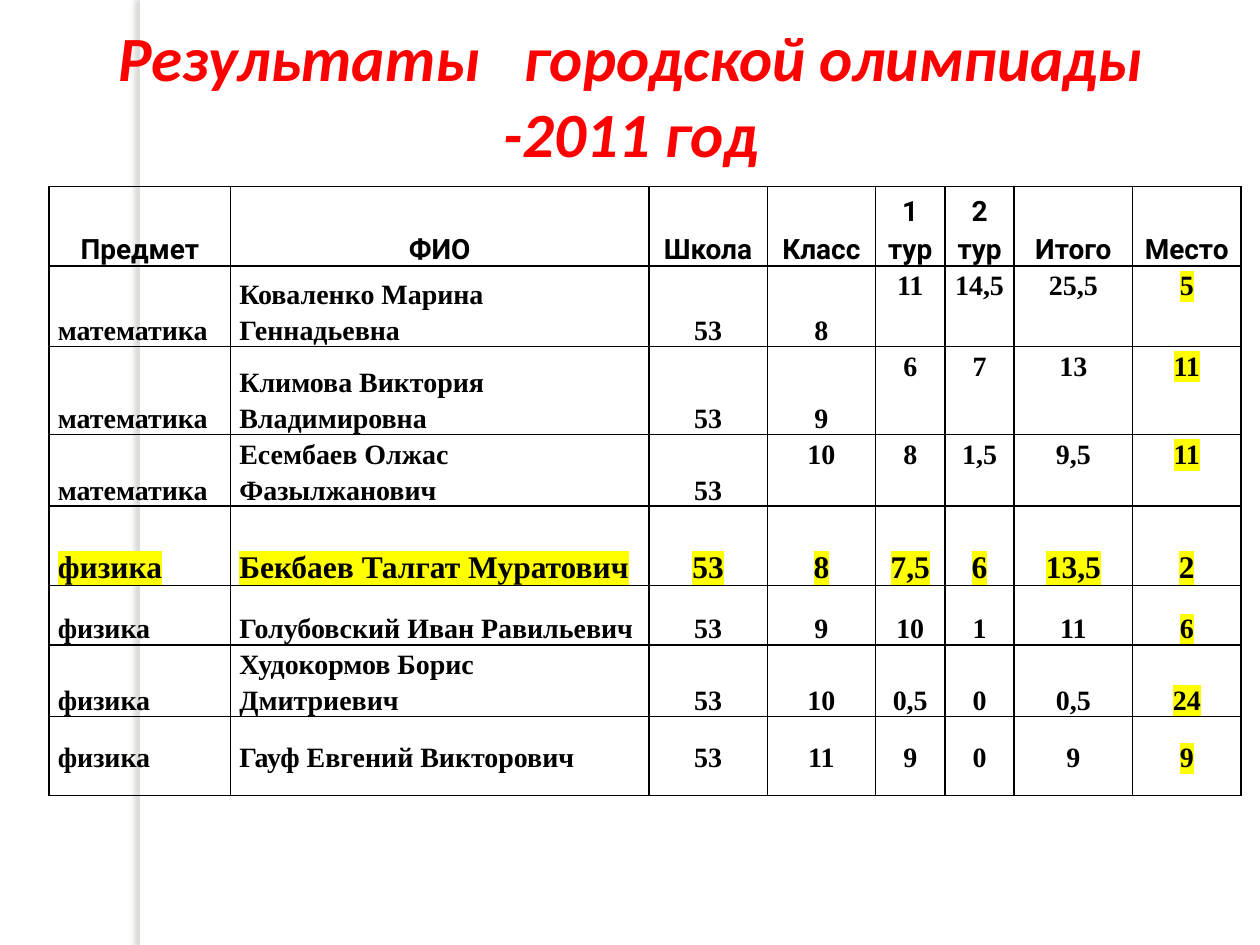
from dataclasses import dataclass

from lxml.etree import SubElement
from pptx import Presentation
from pptx.dml.color import RGBColor
from pptx.enum.shapes import MSO_SHAPE
from pptx.enum.text import MSO_ANCHOR, MSO_AUTO_SIZE, PP_ALIGN
from pptx.oxml import parse_xml
from pptx.oxml.ns import nsdecls, qn
from pptx.slide import Slide
from pptx.util import Inches, Pt

BLACK = RGBColor(0, 0, 0)
WHITE = RGBColor(255, 255, 255)
RED = RGBColor(255, 0, 0)
YELLOW = RGBColor(255, 255, 0)
SHADOW = RGBColor(0x73, 0x6F, 0x63)

TITLE = "Результаты   городской олимпиады -2011 год"
RESULTS = [
    ["Предмет", "ФИО", "Школа", "Класс", "1 тур", "2 тур", "Итого", "Место"],
    ["математика", "Коваленко Марина Геннадьевна", "53", "8", "11", "14,5", "25,5", "5"],
    ["математика", "Климова Виктория Владимировна", "53", "9", "6", "7", "13", "11"],
    ["математика", "Есембаев Олжас Фазылжанович", "53", "10", "8", "1,5", "9,5", "11"],
    ["физика", "Бекбаев Талгат Муратович", "53", "8", "7,5", "6", "13,5", "2"],
    ["физика", "Голубовский Иван Равильевич", "53", "9", "10", "1", "11", "6"],
    ["физика", "Худокормов Борис Дмитриевич", "53", "10", "0,5", "0", "0,5", "24"],
    ["физика", "Гауф Евгений Викторович", "53", "11", "9", "0", "9", "9"],
]
COLUMN_WIDTHS = [1.44, 3.32, 0.94, 0.86, 0.55, 0.55, 0.94, 0.86]
ROW_HEIGHTS = [0.63, 0.64, 0.7, 0.48, 0.63, 0.47, 0.47, 0.63]
FIRST_TOP_COLUMN = {1: 4, 2: 4, 3: 3}
WINNER_ROW = 4
LAST_ROW = len(RESULTS) - 1
PLACE_COLUMN = len(COLUMN_WIDTHS) - 1


@dataclass
class SlideBuilder:
    """Draws the elements of the results slide in one style."""

    slide: Slide
    title_font: str = "Calibri"
    header_font: str = "Roboto"
    body_font: str = "Times New Roman"

    def add_strip(self, left, top, width, height):
        strip = self.slide.shapes.add_shape(
            MSO_SHAPE.RECTANGLE, Inches(left), Inches(top), Inches(width), Inches(height))
        strip.fill.solid()
        strip.fill.fore_color.rgb = WHITE
        strip.line.fill.background()
        strip.element.spPr.append(parse_xml(
            f'<a:effectLst {nsdecls("a")}><a:outerShdw blurRad="{Pt(3)}" dist="{Pt(3)}" '
            f'dir="10800000"><a:srgbClr val="{SHADOW}"><a:alpha val="25000"/></a:srgbClr>'
            '</a:outerShdw></a:effectLst>'))

    def add_title(self, text, left, top, width, height):
        title = self.slide.shapes.title
        title.left, title.top = Inches(left), Inches(top)
        title.width, title.height = Inches(width), Inches(height)
        frame = title.text_frame
        frame.text = text
        frame.word_wrap = True
        frame.auto_size = MSO_AUTO_SIZE.NONE
        frame.vertical_anchor = MSO_ANCHOR.MIDDLE
        para = frame.paragraphs[0]
        para.alignment = PP_ALIGN.CENTER
        self.format_span(para.runs[0], self.title_font, 36, RED)
        para.runs[0].font.italic = True
        title.element.getparent().append(title.element)

    def add_table(self, rows, left, top):
        table = self.slide.shapes.add_table(
            len(rows), len(COLUMN_WIDTHS), Inches(left), Inches(top),
            Inches(sum(COLUMN_WIDTHS)), Inches(sum(ROW_HEIGHTS))).table
        table.first_row = table.horz_banding = False
        for column, width in zip(table.columns, COLUMN_WIDTHS):
            column.width = Inches(width)
        for row, height in zip(table.rows, ROW_HEIGHTS):
            row.height = Inches(height)
        for row_index, values in enumerate(rows):
            for column_index, value in enumerate(values):
                cell = table.cell(row_index, column_index)
                self.fill_cell(cell, value, row_index, column_index)

    def fill_cell(self, cell, value, row, column):
        cell.text_frame.text = value
        cell.margin_left = cell.margin_right = Inches(0.07)
        cell.margin_top = cell.margin_bottom = 0
        if row == LAST_ROW:
            cell.vertical_anchor = MSO_ANCHOR.MIDDLE
        elif column >= FIRST_TOP_COLUMN.get(row, len(COLUMN_WIDTHS)):
            cell.vertical_anchor = MSO_ANCHOR.TOP
        else:
            cell.vertical_anchor = MSO_ANCHOR.BOTTOM
        para = cell.text_frame.paragraphs[0]
        para.line_spacing = 1.15
        para.alignment = PP_ALIGN.CENTER if row == 0 or column > 1 else PP_ALIGN.LEFT
        span = para.runs[0]
        font = self.header_font if row == 0 else self.body_font
        self.format_span(span, font, 18 if row == WINNER_ROW else 16, BLACK)
        if row == WINNER_ROW or (row > 0 and column == PLACE_COLUMN):
            self.highlight(span)
        self.add_borders(cell)
        cell.fill.background()

    def format_span(self, span, name, size, color):
        span.font.name = name
        span.font.size = Pt(size)
        span.font.bold = True
        span.font.color.rgb = color

    def highlight(self, span):
        mark = parse_xml(
            f'<a:highlight {nsdecls("a")}><a:srgbClr val="{YELLOW}"/></a:highlight>')
        span._r.get_or_add_rPr().find(qn("a:solidFill")).addnext(mark)

    def add_borders(self, cell):
        properties = cell._tc.get_or_add_tcPr()
        for side in ("a:lnL", "a:lnR", "a:lnT", "a:lnB"):
            line = SubElement(properties, qn(side), w=str(Pt(1)))
            fill = SubElement(line, qn("a:solidFill"))
            SubElement(fill, qn("a:srgbClr"), val=str(BLACK))


def main():
    deck = Presentation()
    deck.slide_width, deck.slide_height = Inches(10), Inches(7.5)
    page = SlideBuilder(deck.slides.add_slide(deck.slide_layouts[5]))
    page.add_strip(1.11, 0, 0.08, 7.5)
    page.add_table(RESULTS, 0.39, 1.48)
    page.add_title(TITLE, 0.55, 0.47, 8.91, 0.56)
    deck.save("out.pptx")


if __name__ == "__main__":
    main()
